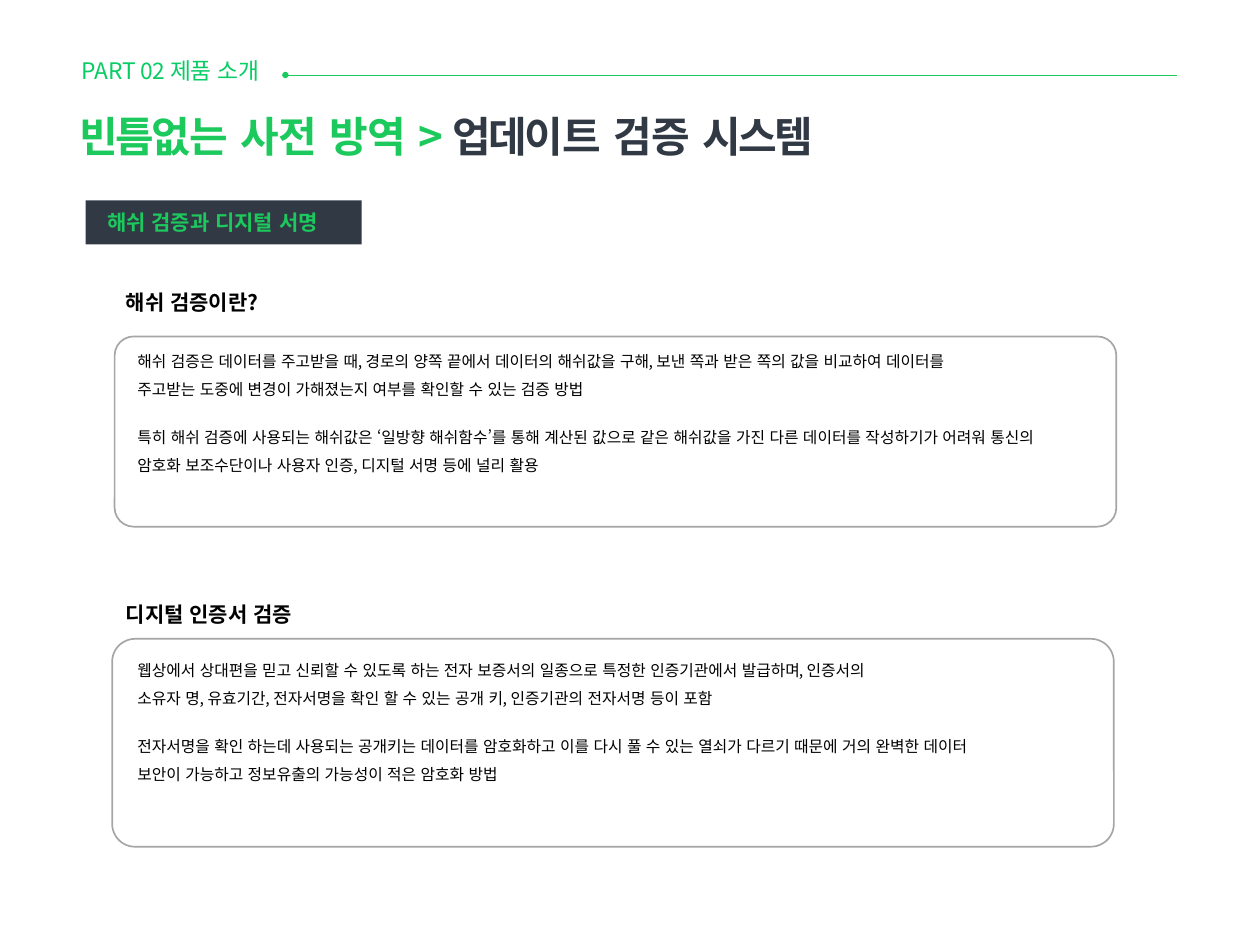
from dataclasses import dataclass
from typing import NamedTuple

from lxml.etree import SubElement
from pptx import Presentation
from pptx.dml.color import RGBColor
from pptx.enum.shapes import MSO_CONNECTOR, MSO_SHAPE as Shape
from pptx.enum.text import MSO_ANCHOR as Anchor
from pptx.oxml.ns import qn
from pptx.util import Inches, Pt

SLIDE_WIDTH, SLIDE_HEIGHT = Inches(10), Inches(7.5)
COLUMN, ROW = SLIDE_WIDTH / 100, SLIDE_HEIGHT / 75


@dataclass(frozen=True)
class Theme:
    font: str = "Noto Sans CJK KR"
    label_green: str = "08CC64"
    green: str = "1CC95D"
    navy: str = "313945"
    black: str = "000000"
    border: str = "A6A6A6"
    label_size: float = 13
    title_size: float = 24
    heading_size: float = 12
    body_size: float = 9
    body_leading: float = 16
    body_gap: float = 11.4
    rule_width: float = 0.48
    border_width: float = 0.96
    tight: float = -1.6


THEME = Theme()


class Frame(NamedTuple):
    column: float
    row: float
    columns: float
    rows: float

    def lengths(self) -> tuple[int, int, int, int]:
        return (round(self.column * COLUMN), round(self.row * ROW),
                round(self.columns * COLUMN), round(self.rows * ROW))


class Span(NamedTuple):
    text: str
    color: str
    tracking: float = 0


@dataclass(frozen=True)
class Panel:
    outline: Frame
    text_frame: Frame
    corner: float
    heading: str
    heading_gap: float
    passages: tuple[str, ...]


TITLE = (
    Span("빈틈없", THEME.green, THEME.tight), Span("는 ", THEME.green),
    Span("사", THEME.green, THEME.tight), Span("전 ", THEME.green),
    Span("방", THEME.green, THEME.tight), Span("역 > ", THEME.green),
    Span("업데이", THEME.navy, THEME.tight), Span("트 ", THEME.navy),
    Span("검", THEME.navy, THEME.tight), Span("증 ", THEME.navy),
    Span("시스템", THEME.navy, THEME.tight),
)

PANELS = (
    Panel(
        Frame(9.1, 26.7, 79.5, 15.1), Frame(9.9, 23, 76, 16.8), 0.1,
        "해쉬 검증이란?", 15.7,
        ("해쉬 검증은 데이터를 주고받을 때, 경로의 양쪽 끝에서 데이터의 해쉬값을 구해, "
         "보낸 쪽과 받은 쪽의 값을 비교하여 데이터를\v"
         "주고받는 도중에 변경이 가해졌는지 여부를 확인할 수 있는 검증 방법",
         "특히 해쉬 검증에 사용되는 해쉬값은 ‘일방향 해쉬함수’를 통해 계산된 값으로 "
         "같은 해쉬값을 가진 다른 데이터를 작성하기가 어려워 통신의\v"
         "암호화 보조수단이나 사용자 인증, 디지털 서명 등에 널리 활용"),
    ),
    Panel(
        Frame(8.9, 50.7, 79.5, 16.5), Frame(9.9, 47.7, 76, 16.8), 0.11,
        "디지털 인증서 검증", 14.6,
        ("웹상에서 상대편을 믿고 신뢰할 수 있도록 하는 전자 보증서의 일종으로 "
         "특정한 인증기관에서 발급하며, 인증서의\v"
         "소유자 명, 유효기간, 전자서명을 확인 할 수 있는 공개 키, "
         "인증기관의 전자서명 등이 포함",
         "전자서명을 확인 하는데 사용되는 공개키는 데이터를 암호화하고 이를 다시 풀 수 있는 "
         "열쇠가 다르기 때문에 거의 완벽한 데이터\v"
         "보안이 가능하고 정보유출의 가능성이 적은 암호화 방법"),
    ),
)


def write(paragraph, text: str, *, size: float, color: str = THEME.black,
          bold: bool = False, tracking: float = 0, indent: float = 0,
          before: float = 0, leading: float | None = None) -> None:
    paragraph.space_before = Pt(before)
    if leading:
        paragraph.line_spacing = Pt(leading)
    if indent:
        paragraph._p.get_or_add_pPr().set("marL", str(round(indent * COLUMN)))
    for index, line in enumerate(text.split("\v")):
        if index:
            paragraph.add_line_break()
        run = paragraph.add_run()
        run.text = line
        run.font.size, run.font.bold = Pt(size), bold
        run.font.name = THEME.font
        run.font.color.rgb = RGBColor.from_string(color)
        properties = run._r.get_or_add_rPr()
        properties.set("lang", "ko-KR")
        if tracking:
            properties.set("spc", str(round(tracking * 100)))
        SubElement(properties, qn("a:ea")).set("typeface", THEME.font)


def prepare_text(shape, anchor: Anchor = Anchor.TOP):
    text_frame = shape.text_frame
    text_frame.word_wrap = True
    text_frame.vertical_anchor = anchor
    text_frame.margin_left = text_frame.margin_right = 0
    text_frame.margin_top = text_frame.margin_bottom = 0
    return text_frame


def add_text(slide, frame: Frame):
    return prepare_text(slide.shapes.add_textbox(*frame.lengths()))


def add_shape(slide, kind: Shape, frame: Frame, *, fill: str | None = None,
              line: str | None = None):
    shape = slide.shapes.add_shape(kind, *frame.lengths())
    shape.shadow.inherit = False
    if fill:
        shape.fill.solid()
        shape.fill.fore_color.rgb = RGBColor.from_string(fill)
    else:
        shape.fill.background()
    if line:
        shape.line.color.rgb = RGBColor.from_string(line)
        shape.line.width = Pt(THEME.border_width)
    else:
        shape.line.fill.background()
    return shape


def add_rule(slide, frame: Frame) -> None:
    left, top, width, height = frame.lengths()
    rule = slide.shapes.add_connector(
        MSO_CONNECTOR.STRAIGHT, left, top, left + width, top + height)
    rule.line.color.rgb = RGBColor.from_string(THEME.green)
    rule.line.width = Pt(THEME.rule_width)
    SubElement(rule._element.spPr, qn("a:effectLst"))


def add_header(slide) -> None:
    label = add_text(slide, Frame(6.5, 4.5, 15.7, 2.6))
    write(label.paragraphs[0], "PART 02 제품 소개", size=THEME.label_size,
          color=THEME.label_green, tracking=-0.1)
    add_rule(slide, Frame(22.4, 6, 71, 0))
    add_shape(slide, Shape.OVAL, Frame(22.4, 5.7, 0.5, 0.5), fill=THEME.green)
    title = add_text(slide, Frame(6.3, 8.8, 65, 4.8))
    for span in TITLE:
        write(title.paragraphs[0], span.text, size=THEME.title_size,
              color=span.color, bold=True, tracking=span.tracking)
    badge = add_shape(slide, Shape.RECTANGLE, Frame(6.8, 15.9, 21.9, 3.5),
                      fill=THEME.navy)
    paragraph = prepare_text(badge, Anchor.MIDDLE).paragraphs[0]
    paragraph.alignment = 1
    write(paragraph, "해쉬 검증과 디지털 서명", size=THEME.heading_size,
          color=THEME.green, bold=True, indent=1.7)


def add_panel(slide, panel: Panel) -> None:
    outline = add_shape(slide, Shape.ROUNDED_RECTANGLE, panel.outline,
                        line=THEME.border)
    outline.adjustments[0] = panel.corner
    text_frame = add_text(slide, panel.text_frame)
    write(text_frame.paragraphs[0], panel.heading, size=THEME.heading_size,
          bold=True, indent=0.1)
    for index, passage in enumerate(panel.passages):
        write(text_frame.add_paragraph(), passage, size=THEME.body_size, indent=1,
              before=THEME.body_gap if index else panel.heading_gap,
              leading=THEME.body_leading)


def main() -> None:
    presentation = Presentation()
    presentation.slide_width, presentation.slide_height = SLIDE_WIDTH, SLIDE_HEIGHT
    slide = presentation.slides.add_slide(presentation.slide_layouts[6])
    add_header(slide)
    for panel in PANELS:
        add_panel(slide, panel)
    presentation.save("out.pptx")


if __name__ == "__main__":
    main()
